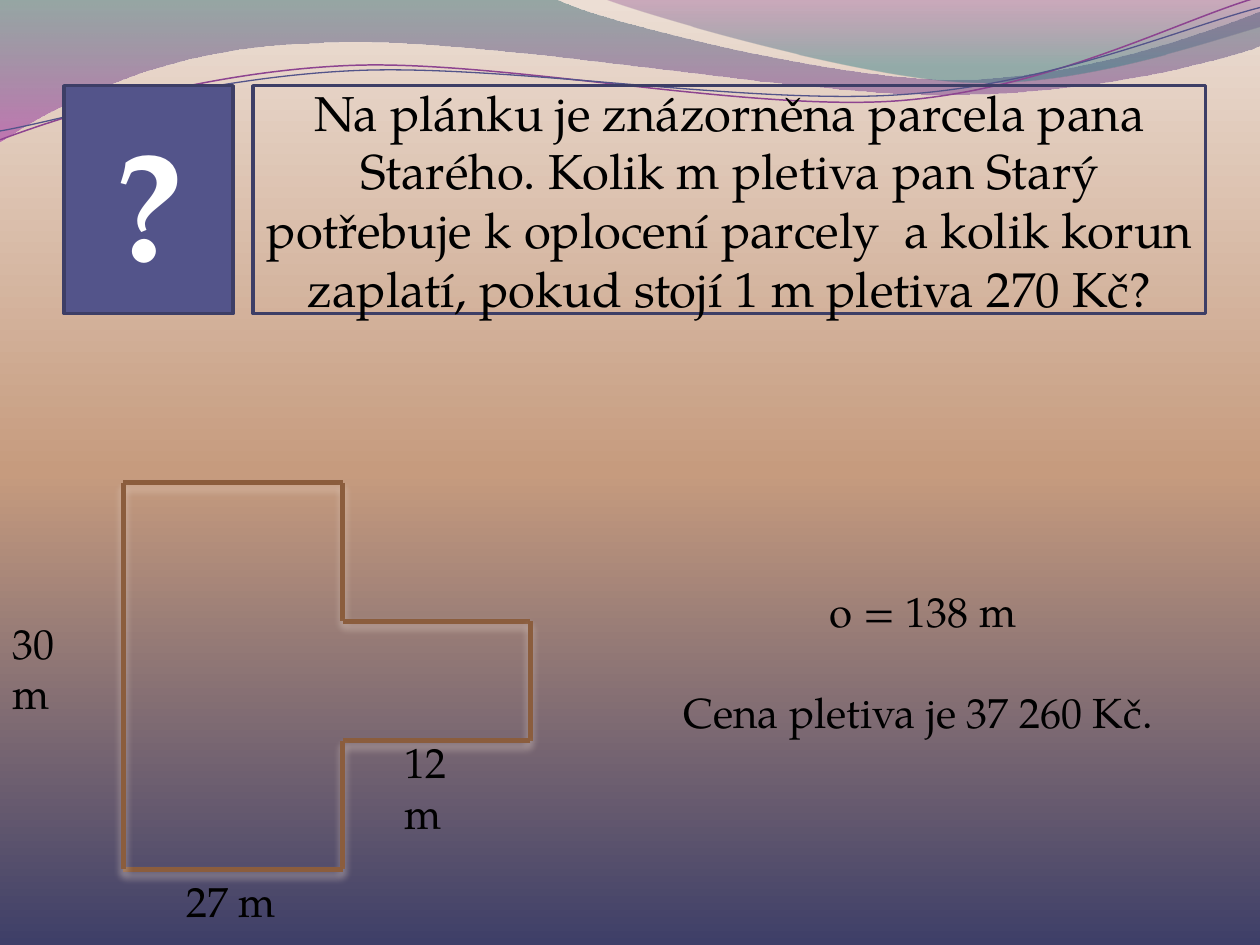
"""Build a geometry word-problem slide about fencing an irregular plot of land."""
import math

from lxml import etree
from pptx import Presentation, util as u
from pptx.dml.color import RGBColor
from pptx.enum import shapes, text
from pptx.oxml import parse_xml
from pptx.oxml.ns import nsdecls, qn

FONT = "TeX Gyre Pagella"
INK = "000000"
color = RGBColor.from_string


def apply_gradient(fill, holder, stops):
    fill.solid()
    solid = holder.find(".//" + qn("a:solidFill"))
    marks = "".join(
        f'<a:gs pos="{pos * 1000}"><a:srgbClr val="{tint}">'
        f'<a:alpha val="{alpha * 1000}"/></a:srgbClr></a:gs>'
        for pos, tint, alpha in stops)
    solid.getparent().replace(solid, parse_xml(
        f'<a:gradFill {nsdecls("a")} rotWithShape="1"><a:gsLst>{marks}</a:gsLst>'
        '<a:lin ang="5400000" scaled="0"/></a:gradFill>'))


def write(box, content, size=24, tint=INK, bold=False, align=None, anchor=None, gap=0):
    frame = box.text_frame
    frame.word_wrap = True
    if anchor is not None:
        frame.vertical_anchor = anchor
    for index, line in enumerate(content.split("\n")):
        para = frame.add_paragraph() if index else frame.paragraphs[0]
        para.alignment = align
        if index:
            para.space_before = u.Pt(gap)
        span = para.add_run()
        span.text = line
        span.font.name, span.font.size, span.font.bold = FONT, u.Pt(size), bold
        span.font.color.rgb = color(tint)


deck = Presentation()
deck.slide_width, deck.slide_height = u.Inches(10), u.Inches(7.5)
page = deck.slides.add_slide(deck.slide_layouts[6])
apply_gradient(page.background.fill, page.background._cSld.bg,
               [(0, "ECDED4", 100), (50, "C69B7E", 100), (100, "3E3F68", 100)])

waves = [
    ([(0, 0), (4.4, -0.01), (4.76, 0.17, 6.64, 0.63, 7.58, 0.63),
      (8.53, 0.63, 9.58, 0.26, 10, 0.09), (10.01, 0.36),
      (9.83, 0.44, 8.7, 0.76, 7.46, 0.75), (6.22, 0.75, 3.82, 0.28, 2.57, 0.34),
      (1.29, 0.36, 0.46, 0.83, -0.01, 1.13)],
     [(0, "2D6368", 45), (100, "A530A9", 55)], None, 0, (0, 0)),
    ([(4.79, -0.01), (5.09, 0.11, 6.82, 0.62, 7.69, 0.65),
      (8.56, 0.69, 9.61, 0.32, 10, 0.21), (10, 0)],
     [(0, "7F2F82", 30), (80, "2F7B82", 45)], None, 0, (0, 0)),
    ([(0, 1.11), (0.48, 0.93, 1.58, 0.57, 2.77, 0.52),
      (3.95, 0.47, 5.93, 0.89, 7.13, 0.8), (8.33, 0.71, 9.38, 0.15, 9.98, -0.02)],
     None, ("8D4490", 0.85), -2.7, (4.99, 0.58)),
    ([(0, 1.04), (0.47, 0.96, 1.64, 0.61, 2.83, 0.56),
      (4.03, 0.51, 5.97, 0.84, 7.17, 0.75), (8.36, 0.67, 9.41, 0.21, 10, 0.06)],
     None, ("53548A", 0.75), -2.7, (5, 0.59)),
]
for steps, stops, stroke, tilt, (mid_x, mid_y) in waves:
    cos, sin = math.cos(math.radians(-tilt)), math.sin(math.radians(-tilt))
    curves = [[(u.Inches(mid_x + (x - mid_x) * cos - (y - mid_y) * sin),
                u.Inches(mid_y + (x - mid_x) * sin + (y - mid_y) * cos))
               for x, y in zip(step[::2], step[1::2])] for step in steps]
    ends = [curve[-1] for curve in curves]
    builder = page.shapes.build_freeform(*ends[0])
    builder.add_line_segments(ends[1:], close=stops is not None)
    wave = builder.convert_to_shape()
    segments = list(wave._element.iter(qn("a:lnTo")))
    for segment, curve in zip(segments, curves[1:]):
        if len(curve) == 3:
            knots = "".join(f'<a:pt x="{x - wave.left}" y="{y - wave.top}"/>'
                            for x, y in curve)
            segment.getparent().replace(segment, parse_xml(
                f'<a:cubicBezTo {nsdecls("a")}>{knots}</a:cubicBezTo>'))
    wave.rotation = tilt
    wave.shadow.inherit = False
    if stops:
        apply_gradient(wave.fill, wave._element.spPr, stops)
        wave.line.fill.background()
    else:
        wave.fill.background()
        wave.line.color.rgb, wave.line.width = color(stroke[0]), u.Pt(stroke[1])

for left, width, fill, content, size, tint, bold in [
    (0.51, 1.34, "53548A", "?", 88, "FFFFFF", True),
    (2.01, 7.56, None, "Na plánku je znázorněna parcela pana Starého. Kolik m pletiva pan "
     "Starý potřebuje k oplocení parcely  a kolik korun zaplatí, pokud stojí 1 m pletiva "
     "270 Kč?", 28, INK, False),
]:
    box = page.shapes.add_shape(shapes.MSO_SHAPE.RECTANGLE, u.Inches(left), u.Inches(0.68),
                                u.Inches(width), u.Inches(1.81))
    box.shadow.inherit = False
    if fill:
        box.fill.solid()
        box.fill.fore_color.rgb = color(fill)
    else:
        box.fill.background()
    box.line.color.rgb, box.line.width = color("3D3E66"), u.Pt(2)
    write(box, content, size=size, tint=tint, bold=bold,
          align=text.PP_ALIGN.CENTER, anchor=text.MSO_ANCHOR.MIDDLE)

corners = [(0.98, 3.83), (2.72, 3.83), (2.72, 4.93), (4.21, 4.93),
           (4.21, 5.88), (2.72, 5.88), (2.72, 6.9), (0.98, 6.9)]
for start, end in zip(corners, corners[1:] + corners[:1]):
    fence = page.shapes.add_connector(shapes.MSO_CONNECTOR.STRAIGHT,
                                      *map(u.Inches, start + end))
    fence.line.color.rgb, fence.line.width = color("8B5D3D"), u.Pt(3)
    effects = etree.SubElement(fence._element.spPr, qn("a:effectLst"))
    effects.append(parse_xml(
        f'<a:outerShdw {nsdecls("a")} blurRad="57150" dist="38100" dir="5400000" '
        'algn="ctr" rotWithShape="0"><a:srgbClr val="E8D8CC"><a:alpha val="48000"/>'
        '</a:srgbClr></a:outerShdw>'))

for content, left, top, width in [("12 m", 3.11, 5.8, 0.87), ("27 m", 1.38, 6.9, 0.94),
                                  ("30 m", 0, 4.85, 0.89)]:
    label = page.shapes.add_textbox(*map(u.Inches, (left, top, width, 0.5)))
    write(label, content)
    label.text_frame.auto_size = text.MSO_AUTO_SIZE.SHAPE_TO_FIT_TEXT

answer = page.shapes.add_textbox(*map(u.Inches, (5.08, 3.83, 4.41, 2.83)))
write(answer, " o = 138 m\nCena pletiva je 37 260 Kč.", gap=29,
      align=text.PP_ALIGN.CENTER, anchor=text.MSO_ANCHOR.MIDDLE)

deck.save("out.pptx")
